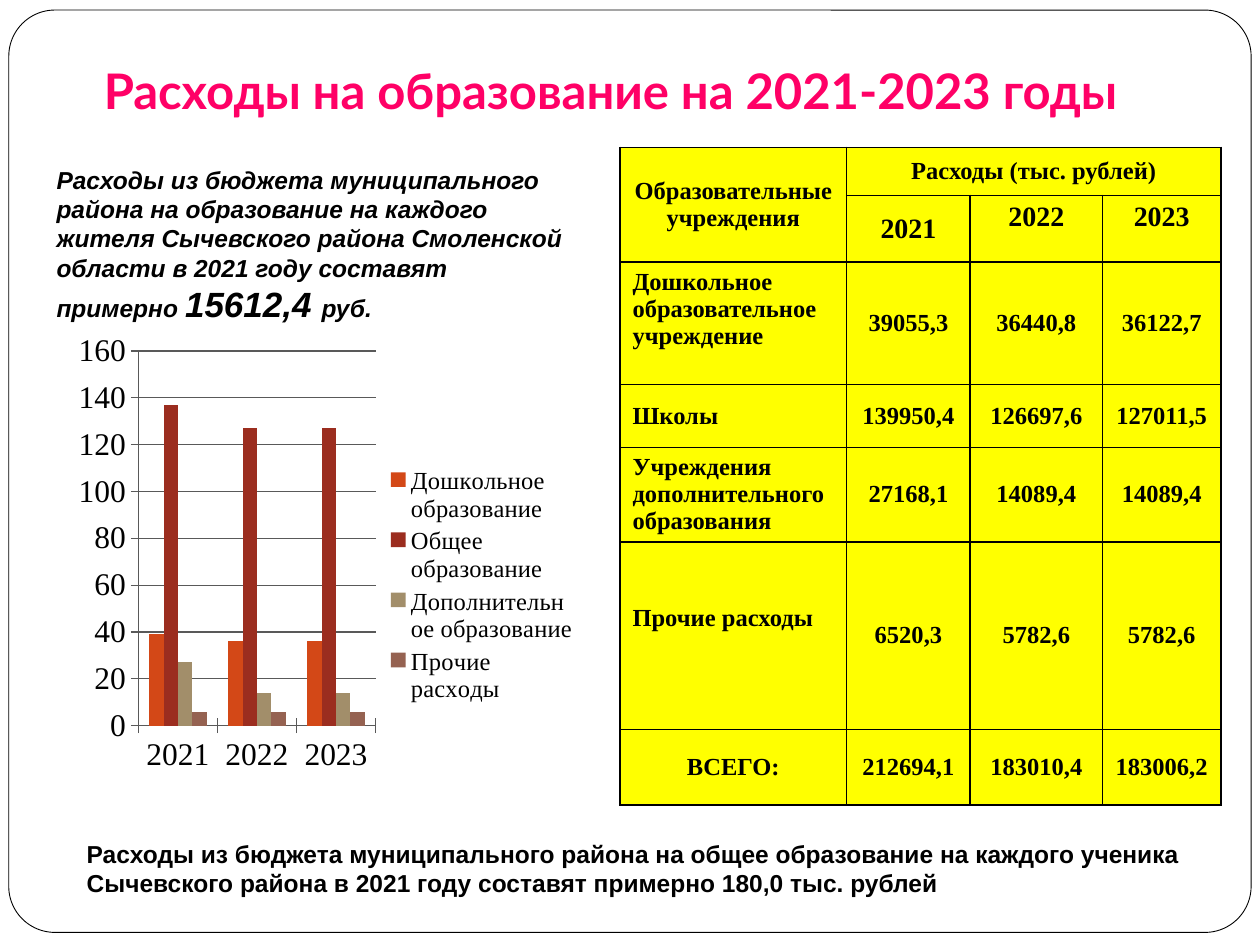
import dataclasses
import pptx
import pptx.chart.data
import pptx.dml.color
import pptx.enum.chart
import pptx.enum.shapes
import pptx.enum.text
import pptx.oxml
import pptx.oxml.ns
import pptx.util

Pt = pptx.util.Pt
ALIGN = pptx.enum.text.PP_ALIGN
ANCHOR = pptx.enum.text.MSO_ANCHOR
COLS, ROWS = 100, 75
WIDE, HIGH = pptx.util.Inches(10), pptx.util.Inches(7.5)


@dataclasses.dataclass(frozen=True)
class Theme:
    """Colours, fonts and type sizes."""
    ink: str = "000000"
    paper: str = "FFFFFF"
    pink: str = "FF0066"
    cell: str = "FFFF00"
    grid: str = "595959"
    bars: tuple = ("D34817", "9B2D1F", "A28E6A", "956251")
    head: str = "Lato"
    sans: str = "Arial"
    serif: str = "Times New Roman"
    title: int = 28
    big: int = 20
    axis: int = 18
    year: int = 16
    text: int = 14


THEME = Theme()
HEADS = ["Образовательные учреждения", "Расходы (тыс. рублей)"]
YEARS = ["2021", "2022", "2023"]
COSTS = [
    ("Дошкольное образовательное учреждение", "39055,3", "36440,8", "36122,7"),
    ("Школы", "139950,4", "126697,6", "127011,5"),
    ("Учреждения\nдополнительного\nобразования", "27168,1", "14089,4", "14089,4"),
    ("Прочие расходы", "6520,3", "5782,6", "5782,6"),
    ("ВСЕГО:", "212694,1", "183010,4", "183006,2"),
]
SERIES = {
    "Дошкольное образование": (39, 36, 36),
    "Общее образование": (137, 127, 127),
    "Дополнительное образование": (27, 14, 14),
    "Прочие расходы": (6, 6, 6),
}
LOCAL = ["Расходы из бюджета муниципального района на образование на каждого "
         "жителя Сычевского района Смоленской области в 2021 году составят "
         "примерно ", "15612,4 ", "руб."]
PUPIL = ["Расходы из бюджета муниципального района на общее образование на "
         "каждого ученика Сычевского района в 2021 году составят примерно "
         "180,0 тыс. рублей"]


def across(cols):
    """Turn grid columns into a length."""
    return round(WIDE * cols / COLS)


def down(rows):
    """Turn grid rows into a length."""
    return round(HIGH * rows / ROWS)


def place(left, top, wide, high):
    """Turn a grid box into four lengths."""
    return across(left), down(top), across(wide), down(high)


def tint(code):
    """Make a colour from its code."""
    return pptx.dml.color.RGBColor.from_string(code)


def style(font, face, size, color=THEME.ink, bold=True, italic=False):
    """Set the look of a font."""
    font.name, font.size, font.bold, font.italic = face, Pt(size), bold, italic
    font.color.rgb = tint(color)


def add_frame(slide):
    """Draw the rounded border behind everything."""
    shape = slide.shapes.add_shape(
        pptx.enum.shapes.MSO_SHAPE.ROUNDED_RECTANGLE, *place(0.7, 0.8, 98.6, 73.2))
    shape.adjustments[0] = 0.05
    shape.shadow.inherit = False
    shape.fill.solid()
    shape.fill.fore_color.rgb = tint(THEME.paper)
    shape.line.color.rgb = tint(THEME.ink)
    shape.line.width = Pt(0.5)
    shape.element.getparent().insert(2, shape.element)


def add_title(slide, text):
    """Fill and move the title placeholder."""
    title = slide.shapes.title
    title.left, title.top, title.width, title.height = place(0, 2.8, 96.9, 7.7)
    frame = title.text_frame
    frame.text = text
    frame.vertical_anchor = ANCHOR.BOTTOM
    frame.margin_bottom = down(1)
    frame.paragraphs[0].alignment = ALIGN.CENTER
    style(frame.paragraphs[0].runs[0].font, THEME.head, THEME.title, THEME.pink)


def add_note(slide, box, parts, sizes, italic=False):
    """Add a wrapped text box with one run for each part."""
    frame = slide.shapes.add_textbox(*place(*box)).text_frame
    frame.word_wrap = True
    frame.vertical_anchor = ANCHOR.MIDDLE
    for part, size in zip(parts, sizes):
        run = frame.paragraphs[0].add_run()
        run.text = part
        style(run.font, THEME.sans, size, italic=italic)


def edge(cell):
    """Give a cell thin lines on its four sides."""
    props = cell._tc.get_or_add_tcPr()
    for side in "LRTB":
        props.append(pptx.oxml.parse_xml(
            f'<a:ln{side} {pptx.oxml.ns.nsdecls("a")} w="12700"><a:solidFill>'
            f'<a:srgbClr val="{THEME.ink}"/></a:solidFill></a:ln{side}>'))


def fill_cell(cell, text, size=THEME.text, align=ALIGN.CENTER, anchor=ANCHOR.MIDDLE):
    """Write and format one table cell."""
    cell.text_frame.text = text
    cell.vertical_anchor = anchor
    for para in cell.text_frame.paragraphs:
        para.alignment = align
        for run in para.runs:
            style(run.font, THEME.serif, size)


def add_costs(slide):
    """Build the table of costs by year."""
    widths = [18, 9.8, 10.5, 9.4]
    heights = [3.8, 5.3, 9.7, 5, 7.5, 14.9, 6]
    table = slide.shapes.add_table(
        len(heights), len(widths),
        *place(49.2, 11.7, sum(widths), sum(heights))).table
    for col, width in zip(table.columns, widths):
        col.width = across(width)
    for row, height in zip(table.rows, heights):
        row.height = down(height)
    for cell in table.iter_cells():
        edge(cell)
        cell.fill.solid()
        cell.fill.fore_color.rgb = tint(THEME.cell)
    table.cell(0, 0).merge(table.cell(1, 0))
    table.cell(0, 1).merge(table.cell(0, 3))
    for col, text in enumerate(HEADS):
        fill_cell(table.cell(0, col), text)
    for col, year in enumerate(YEARS, 1):
        fill_cell(table.cell(1, col), year, THEME.year,
                  anchor=ANCHOR.MIDDLE if col == 1 else ANCHOR.TOP)
    looks = [(ALIGN.JUSTIFY, ANCHOR.TOP), (ALIGN.JUSTIFY, ANCHOR.MIDDLE),
             (ALIGN.JUSTIFY, ANCHOR.MIDDLE), (ALIGN.LEFT, ANCHOR.TOP),
             (ALIGN.CENTER, ANCHOR.MIDDLE)]
    for row, ((name, *sums), (align, anchor)) in enumerate(zip(COSTS, looks), 2):
        fill_cell(table.cell(row, 0), name, align=align, anchor=anchor)
        for col, value in enumerate(sums, 1):
            fill_cell(table.cell(row, col), value)
    table.cell(5, 0).margin_top = down(5)


def set_plot(chart, **shares):
    """Fix the inner plot area as shares of the chart."""
    area = chart._chartSpace.chart.plotArea
    for old in area.findall(pptx.oxml.ns.qn("c:layout")):
        area.remove(old)
    parts = "".join(f'<c:{key}Mode val="edge"/>' for key in "xy")
    parts += "".join(f'<c:{key} val="{val}"/>' for key, val in shares.items())
    area.insert(0, pptx.oxml.parse_xml(
        f'<c:layout {pptx.oxml.ns.nsdecls("c")}><c:manualLayout>'
        f'<c:layoutTarget val="inner"/>{parts}</c:manualLayout></c:layout>'))


def add_bars(slide):
    """Build the clustered column chart."""
    data = pptx.chart.data.CategoryChartData()
    data.categories = YEARS
    for name, values in SERIES.items():
        data.add_series(name, values)
    chart = slide.shapes.add_chart(
        pptx.enum.chart.XL_CHART_TYPE.COLUMN_CLUSTERED,
        *place(3.1, 25.8, 43.8, 41.3), data).chart
    style(chart.font, THEME.serif, THEME.axis, bold=False)
    chart.has_title = False
    chart.has_legend = True
    chart.legend.position = pptx.enum.chart.XL_LEGEND_POSITION.RIGHT
    chart.legend.include_in_layout = False
    style(chart.legend.font, THEME.serif, THEME.text, bold=False)
    plot = chart.plots[0]
    plot.vary_by_categories = False
    plot.gap_width, plot.overlap = 150, 0
    for series, color in zip(plot.series, THEME.bars):
        series.format.fill.solid()
        series.format.fill.fore_color.rgb = tint(color)
    scale = chart.value_axis
    scale.minimum_scale, scale.maximum_scale, scale.major_unit = 0, 160, 20
    scale.has_major_gridlines = True
    for axis in (chart.category_axis, scale):
        axis.major_tick_mark = pptx.enum.chart.XL_TICK_MARK.CROSS
        axis.format.line.color.rgb = tint(THEME.grid)
    scale.major_gridlines.format.line.color.rgb = tint(THEME.grid)
    set_plot(chart, x=0.18, y=0.05, w=0.43, h=0.72)


def main():
    """Build and save the slide."""
    deck = pptx.Presentation()
    deck.slide_width, deck.slide_height = WIDE, HIGH
    slide = deck.slides.add_slide(deck.slide_layouts[5])
    add_frame(slide)
    add_title(slide, "Расходы на образование на 2021-2023 годы")
    add_costs(slide)
    add_note(slide, (3.5, 12.3, 42.5, 14.2), LOCAL,
             (THEME.text, THEME.big, THEME.text), italic=True)
    add_note(slide, (5.9, 66.6, 90, 4.6), PUPIL, (THEME.text,))
    add_bars(slide)
    deck.save("out.pptx")


if __name__ == "__main__":
    main()
